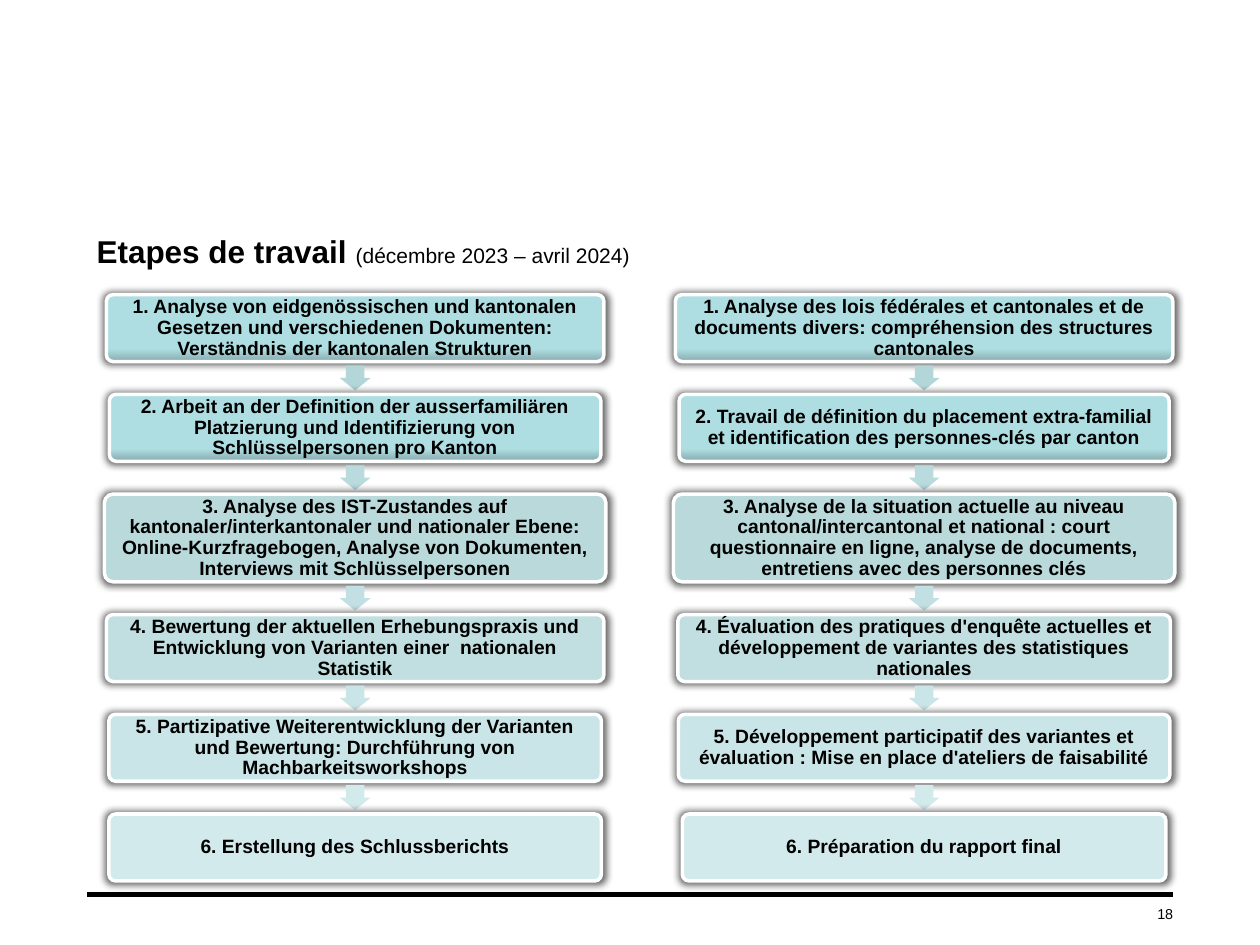
from copy import deepcopy

from lxml import etree
from pptx import Presentation
from pptx import util as u
from pptx.dml.color import RGBColor
from pptx.enum import shapes as sh, text as tx
from pptx.oxml import parse_xml
from pptx.oxml.ns import nsdecls, qn

Cm, Pt = u.Cm, u.Pt


def rgb(code):
    return RGBColor.from_string(code)


def write(frame, runs, align, **form):
    """Fill a frame with one paragraph of (wording, size, bold) runs."""
    form = {"word_wrap": True, "auto_size": tx.MSO_AUTO_SIZE.NONE, **form}
    for key, val in form.items():
        setattr(frame, key, val)
    para = frame.paragraphs[0]
    para.alignment = align
    for words, size, bold in runs:
        run = para.add_run()
        run.text = words
        font = {"name": "Arial", "size": Pt(size), "bold": bold}
        for key, val in font.items():
            setattr(run.font, key, val)
        run.font.color.rgb = rgb("000000")
    return para


SIDES = ("margin_left", "margin_right", "margin_top", "margin_bottom")
FLUSH = dict.fromkeys(SIDES, 0)
INSET = dict.fromkeys(SIDES, Cm(0.17))

# Geometry in cm
TOP, GAP, LOW, TALL = 5.94, 0.66, 1.35, 1.77
ARROW_W, ARROW_H = 0.5, 0.62

FADE = [(0, "87ABAE"), (0.19, "AFDEE2"), (1, "AFE0E4")]
FILLS = [FADE, FADE, "B9D9DB", "C1DFE1", "CAE5E7", "D3EAEC"]
ARROWS = ["B3D6D9", "BADBDE", "C2E0E3", "CAE5E8", "D3EAEC"]

# Column centre, then (box width, wording) for each step
FRENCH = (18.63, [
    (10.03, "1. Analyse des lois fédérales et cantonales et de documents divers: "
            "compréhension des structures cantonales"),
    (9.88, "2. Travail de définition du placement extra-familial et "
           "identification des personnes-clés par canton"),
    (10.11, "3. Analyse de la situation actuelle au niveau cantonal/intercantonal "
            "et national : court questionnaire en ligne, analyse de documents, "
            "entretiens avec des personnes clés"),
    (9.93, "4. Évaluation des pratiques d'enquête actuelles et développement "
           "de variantes des statistiques nationales"),
    (9.91, "5. Développement participatif des variantes et évaluation : "
           "Mise en place d'ateliers de faisabilité"),
    (9.75, "6. Préparation du rapport final"),
])
GERMAN = (7.16, [
    (10.03, "1. Analyse von eidgenössischen und kantonalen Gesetzen und "
            "verschiedenen Dokumenten: Verständnis der kantonalen Strukturen"),
    (9.91, "2. Arbeit an der Definition der ausserfamiliären Platzierung und "
           "Identifizierung von Schlüsselpersonen pro Kanton"),
    (10.11, "3. Analyse des IST-Zustandes auf kantonaler/interkantonaler und "
            "nationaler Ebene: Online-Kurzfragebogen, Analyse von Dokumenten, "
            "Interviews mit Schlüsselpersonen"),
    (10.03, "4. Bewertung der aktuellen Erhebungspraxis und Entwicklung von "
            "Varianten einer  nationalen Statistik"),
    (9.93, "5. Partizipative Weiterentwicklung der Varianten und Bewertung: "
           "Durchführung von Machbarkeitsworkshops"),
    (9.93, "6. Erstellung des Schlussberichts"),
])

GLOW = (f'<a:effectLst {nsdecls("a")}><a:outerShdw blurRad="50800" dist="0" '
        'sx="101000" sy="104000" algn="ctr" rotWithShape="0"><a:srgbClr val="000000">'
        '<a:alpha val="60000"/></a:srgbClr></a:outerShdw></a:effectLst>')

prs = Presentation()
prs.slide_width, prs.slide_height = Cm(25.4), Cm(19.05)
slide = prs.slides.add_slide(prs.slide_layouts[5])
items = slide.shapes

rule = items.add_connector(sh.MSO_CONNECTOR.STRAIGHT,
                           Cm(1.75), Cm(18.03), Cm(23.65), Cm(18.03))
rule.line.color.rgb = rgb("000000")
rule.line.width = Pt(3)
etree.SubElement(rule._element.spPr, qn("a:effectLst"))

page = items.add_textbox(Cm(21.59), Cm(18.14), Cm(2.06), Cm(0.46))
write(page.text_frame, [("18", 8.2, False)], tx.PP_ALIGN.RIGHT,
      vertical_anchor=tx.MSO_ANCHOR.BOTTOM, **FLUSH)

title = items.title
place = {"left": 1.75, "top": 4.6, "width": 21.9, "height": 0.69}
for key, val in place.items():
    setattr(title, key, Cm(val))
write(title.text_frame,
      [(" ", 20, True), ("Etapes de travail ", 18, True),
       ("(décembre 2023 – avril 2024)", 12, False)],
      tx.PP_ALIGN.LEFT, vertical_anchor=tx.MSO_ANCHOR.TOP, **FLUSH)

for mid, steps in (FRENCH, GERMAN):
    top = TOP
    for num, (width, words) in enumerate(steps):
        high = TALL if num == 2 else LOW
        box = items.add_shape(sh.MSO_SHAPE.ROUNDED_RECTANGLE, Cm(mid - width / 2),
                              Cm(top), Cm(width), Cm(high))
        box.adjustments[0] = 0.1
        if FILLS[num] is FADE:
            box.fill.gradient()
            box.fill.gradient_angle = 90
            stops = box._element.spPr.find(f".//{qn('a:gsLst')}")
            stops.append(deepcopy(stops[-1]))
            for stop, (pos, code) in zip(box.fill.gradient_stops, FADE):
                stop.position = pos
                stop.color.rgb = rgb(code)
        else:
            box.fill.solid()
            box.fill.fore_color.rgb = rgb(FILLS[num])
        box.line.color.rgb = rgb("FFFFFF")
        box.line.width = Pt(2)
        box._element.spPr.append(parse_xml(GLOW))
        para = write(box.text_frame, [(words, 11, True)], tx.PP_ALIGN.CENTER,
                     vertical_anchor=tx.MSO_ANCHOR.MIDDLE, **INSET)
        para.line_spacing = 0.9
        top += high + GAP

        if num < len(ARROWS):
            arrow = items.add_shape(
                sh.MSO_SHAPE.RIGHT_ARROW, Cm(mid - ARROW_W / 2),
                Cm(top - GAP / 2 - ARROW_H / 2), Cm(ARROW_W), Cm(ARROW_H))
            arrow.rotation = 90
            arrow.adjustments[0] = 0.6
            arrow.shadow.inherit = False
            arrow.fill.solid()
            arrow.fill.fore_color.rgb = rgb(ARROWS[num])
            arrow.line.fill.background()

prs.save("out.pptx")
